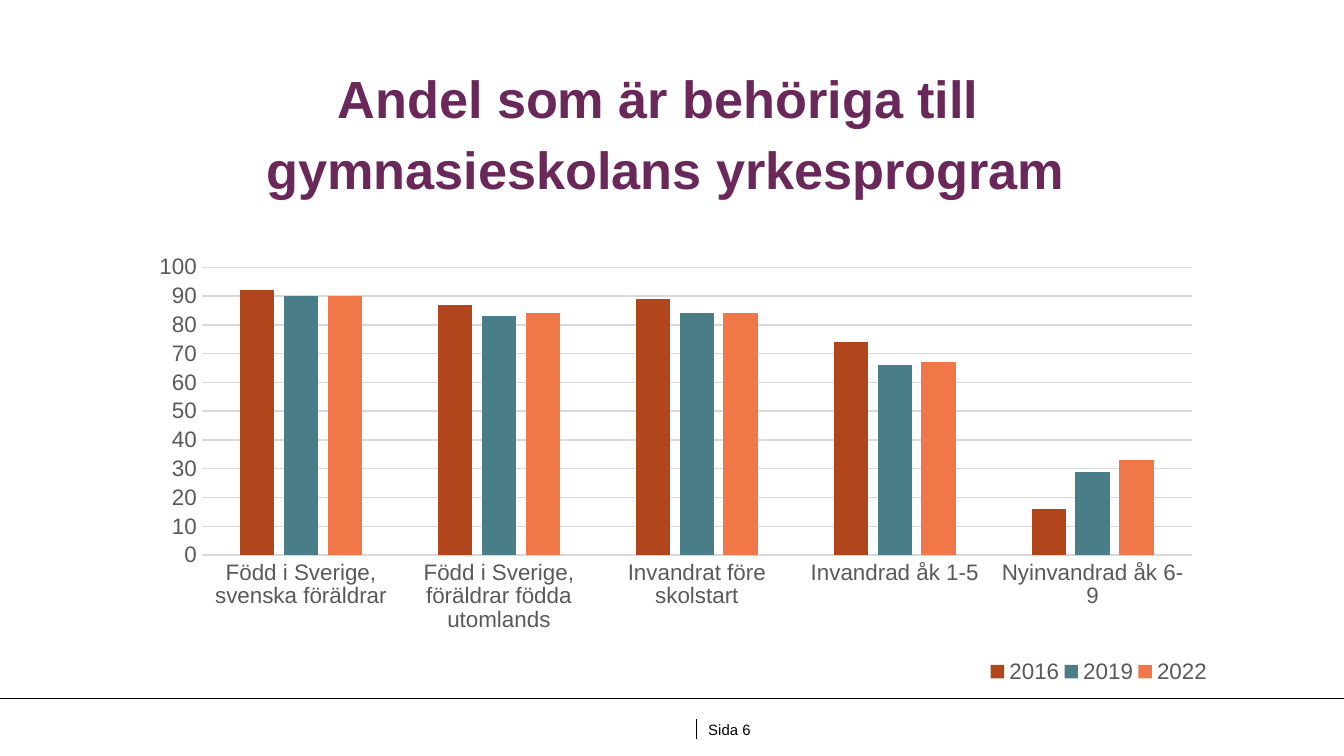
from lxml import etree
from pptx import Presentation
from pptx.chart.data import CategoryChartData
from pptx.dml.color import RGBColor
from pptx.enum.chart import XL_CHART_TYPE, XL_LEGEND_POSITION, XL_TICK_MARK
from pptx.enum.shapes import MSO_CONNECTOR
from pptx.enum.text import MSO_ANCHOR, PP_ALIGN
from pptx.oxml import parse_xml
from pptx.oxml.ns import nsdecls, qn
from pptx.util import Inches, Pt

CLUSTERED = XL_CHART_TYPE.COLUMN_CLUSTERED
BOTTOM = XL_LEGEND_POSITION.BOTTOM
NO_TICK = XL_TICK_MARK.NONE
STRAIGHT = MSO_CONNECTOR.STRAIGHT
TOP = MSO_ANCHOR.TOP
CENTER = PP_ALIGN.CENTER
LEFT = PP_ALIGN.LEFT

FONT = "Arial"
COLORS = {
    "title": "692859",
    "ink": "000000",
    "label": "595959",
    "grid": "D9D9D9",
    "2016": "B1451C",
    "2019": "497E89",
    "2022": "EF7748",
}
CATEGORIES = [
    "Född i Sverige, svenska föräldrar",
    "Född i Sverige, föräldrar födda utomlands",
    "Invandrat före skolstart",
    "Invandrad åk 1-5",
    "Nyinvandrad åk 6-9",
]
SHARES = {
    "2016": [92, 87, 89, 74, 16],
    "2019": [90, 83, 84, 66, 29],
    "2022": [90, 84, 84, 67, 33],
}


def color(key):
    return RGBColor.from_string(COLORS[key])


def style_font(font, size, key, bold=False):
    font.name = FONT
    font.size = Pt(size)
    font.bold = bold
    font.color.rgb = color(key)


def style_line(line, key, width):
    line.color.rgb = color(key)
    line.width = Pt(width)


def add_text(slide, box, text, align, margins):
    frame = slide.shapes.add_textbox(*map(Inches, box)).text_frame
    frame.word_wrap = True
    frame.vertical_anchor = TOP
    (frame.margin_left, frame.margin_top,
     frame.margin_right, frame.margin_bottom) = map(Inches, margins)
    paragraph = frame.paragraphs[0]
    paragraph.text = text
    paragraph.alignment = align
    return paragraph


def add_rule(slide, start, end):
    rule = slide.shapes.add_connector(STRAIGHT, *map(Inches, start + end))
    style_line(rule.line, "ink", 0.5)
    etree.SubElement(rule._element.spPr, qn("a:effectLst"))


def add_title(slide, box):
    title = add_text(
        slide, box,
        "Andel som är behöriga till \vgymnasieskolans yrkesprogram",
        CENTER, (0, 0.05, 0.1, 0.05))
    title.line_spacing = Pt(38)
    style_font(title.font, 28, "title", bold=True)


def set_layout(parent, position, x, y, width, height, inner=False):
    target = '<c:layoutTarget val="inner"/>' if inner else ""
    layout = parse_xml(
        f'<c:layout {nsdecls("c")}><c:manualLayout>{target}'
        '<c:xMode val="edge"/><c:yMode val="edge"/>'
        f'<c:x val="{x}"/><c:y val="{y}"/>'
        f'<c:w val="{width}"/><c:h val="{height}"/>'
        '</c:manualLayout></c:layout>')
    for old in parent.findall(qn("c:layout")):
        parent.remove(old)
    parent.insert(position, layout)


def add_eligibility_chart(slide, box):
    data = CategoryChartData()
    data.categories = CATEGORIES
    for year, values in SHARES.items():
        data.add_series(year, values)
    chart = slide.shapes.add_chart(CLUSTERED, *map(Inches, box), data).chart
    chart.has_title = False
    style_font(chart.font, 10, "ink")

    plot = chart.plots[0]
    plot.gap_width = 219
    plot.overlap = -27
    plot.vary_by_categories = False
    for series in plot.series:
        series.format.fill.solid()
        series.format.fill.fore_color.rgb = color(series.name)

    for axis in (chart.category_axis, chart.value_axis):
        axis.major_tick_mark = axis.minor_tick_mark = NO_TICK
        style_font(axis.tick_labels.font, 12, "label")
    style_line(chart.category_axis.format.line, "grid", 0.75)

    shares = chart.value_axis
    shares.minimum_scale = 0
    shares.maximum_scale = 100
    shares.major_unit = 10
    shares.format.line.fill.background()
    shares.has_major_gridlines = True
    style_line(shares.major_gridlines.format.line, "grid", 0.75)

    chart.has_legend = True
    chart.legend.position = BOTTOM
    chart.legend.include_in_layout = False
    style_font(chart.legend.font, 12, "label")
    set_layout(chart.legend._element, 1, 0.79, 0.88, 0.21, 0.09)
    plot_area = chart._chartSpace.chart.plotArea
    set_layout(plot_area, 0, 0.064, 0.026, 0.917, 0.64, inner=True)


def add_footer(slide, box):
    left, top, width, height = box
    add_rule(slide, (left, top), (left + width, top))
    divider = left + 5.18
    add_rule(slide, (divider, top + 0.15), (divider, top + 0.3))
    page = add_text(slide, (divider + 0.09, top + 0.16, 0.5, 0.14),
                    "Sida 6", LEFT, (0, 0, 0, 0))
    style_font(page.font, 8, "ink")


def main():
    deck = Presentation()
    deck.slide_width = Inches(10)
    deck.slide_height = deck.slide_width * 9 // 16
    slide = deck.slides.add_slide(deck.slide_layouts[6])
    add_footer(slide, (0, 5.2, 10, 0.42))
    add_title(slide, (0, 0.38, 10, 1.01))
    add_eligibility_chart(slide, (0.99, 1.9, 8.03, 3.35))
    deck.save("out.pptx")


if __name__ == "__main__":
    main()
